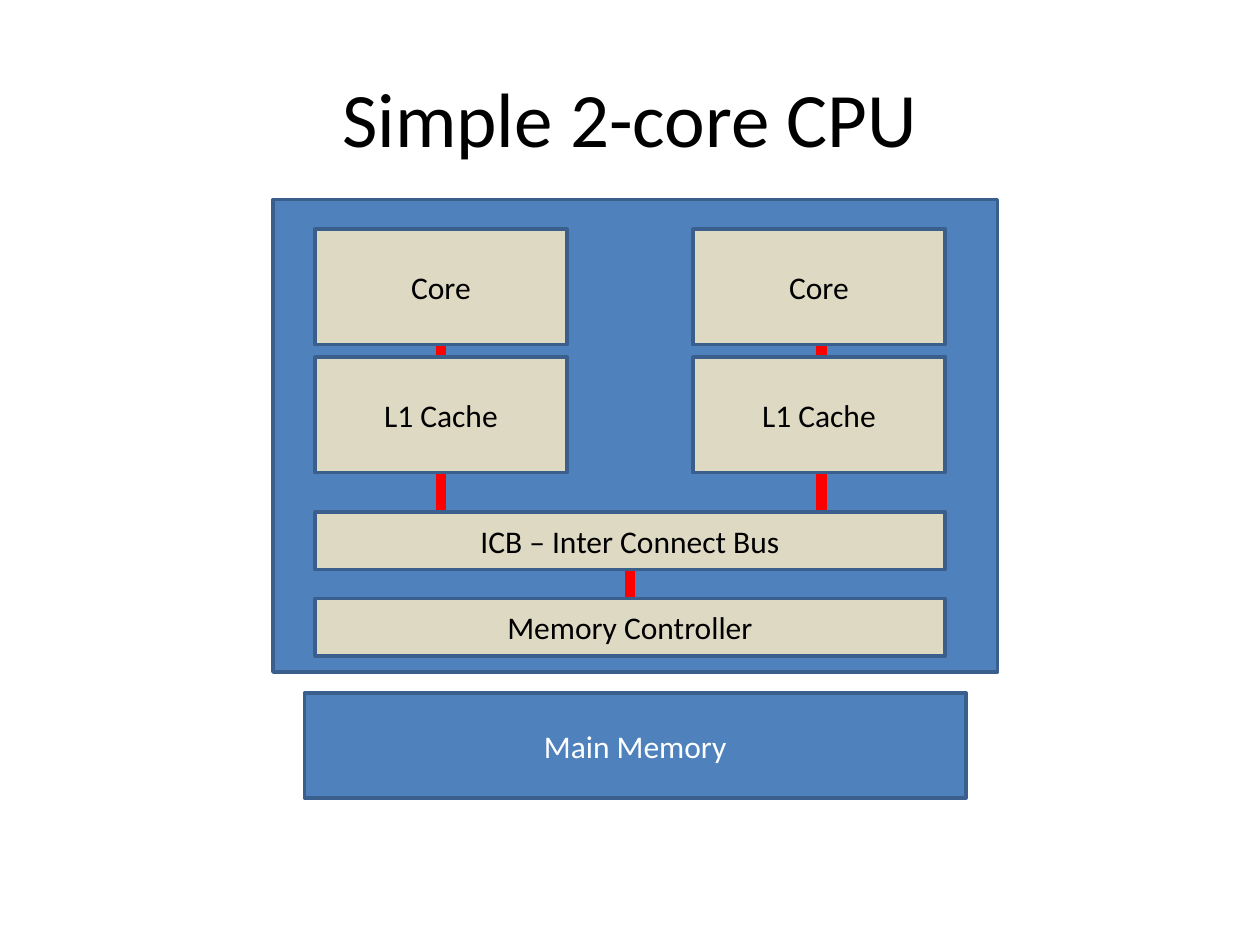
"""Build a slide with a block diagram of a simple two-core CPU."""
from lxml import etree
from pptx import Presentation
from pptx import util as u
from pptx.dml.color import RGBColor
from pptx.enum import shapes, text
from pptx.oxml.ns import qn

COLORS = {"blue": "4F81BD", "outline": "3A5F8C", "beige": "DDD9C3",
          "bus": "FF0000", "black": "000000", "white": "FFFFFF"}
FONT = "Calibri"
TITLE = "Simple 2-core CPU"
TITLE_BOX = (36, 21.6, 648, 90)
PACKAGE_BOX = (156, 114, 414, 270)
MEMORY = ("Main Memory", (174, 396, 378, 60))

LEFT, CORE_PITCH, CORE_COUNT = 180, 216, 2
CORE_SIZE = (144, 66)
CORE_ROWS = [("Core", 131), ("L1 Cache", 204)]
WIDE_SIZE = (360, 33)
WIDE_ROWS = [("ICB – Inter Connect Bus", 292.5), ("Memory Controller", 342)]
BUS_LINES = [(252, 309, 180), (469.5, 301.5, 173), (360, 366, 309)]


def color(name):
    return RGBColor.from_string(COLORS[name])


def points(values):
    return [u.Pt(value) for value in values]


def write(shape, label, size, font_color):
    frame = shape.text_frame
    frame.text = label
    frame.vertical_anchor = text.MSO_ANCHOR.MIDDLE
    paragraph = frame.paragraphs[0]
    paragraph.alignment = text.PP_ALIGN.CENTER
    paragraph.font.name = FONT
    paragraph.font.size = u.Pt(size)
    paragraph.font.color.rgb = color(font_color)


def add_block(parent, box, fill, label="", font_color="black"):
    shape = parent.add_shape(shapes.MSO_SHAPE.RECTANGLE, *points(box))
    shape.shadow.inherit = False
    shape.fill.solid()
    shape.fill.fore_color.rgb = color(fill)
    shape.line.color.rgb = color("outline")
    shape.line.width = u.Pt(2)
    if label:
        write(shape, label, 18, font_color)


def add_bus_line(parent, x, start, end):
    line = parent.add_connector(shapes.MSO_CONNECTOR.STRAIGHT,
                                *points((x, start, x, end)))
    line.line.color.rgb = color("bus")
    line.line.width = u.Pt(6)
    etree.SubElement(line._element.spPr, qn("a:effectLst"))


def main():
    presentation = Presentation()
    presentation.slide_width, presentation.slide_height = points((720, 540))
    slide = presentation.slides.add_slide(presentation.slide_layouts[5])

    title = slide.shapes.title
    title.left, title.top, title.width, title.height = points(TITLE_BOX)
    write(title, TITLE, 44, "black")

    cpu = slide.shapes.add_group_shape().shapes
    add_block(cpu, PACKAGE_BOX, "blue")
    for bus_line in BUS_LINES:
        add_bus_line(cpu, *bus_line)
    for core in range(CORE_COUNT):
        for label, top in CORE_ROWS:
            add_block(cpu, (LEFT + core * CORE_PITCH, top, *CORE_SIZE), "beige", label)
    for label, top in WIDE_ROWS:
        add_block(cpu, (LEFT, top, *WIDE_SIZE), "beige", label)

    label, box = MEMORY
    add_block(slide.shapes, box, "blue", label, "white")
    presentation.save("out.pptx")


if __name__ == "__main__":
    main()
